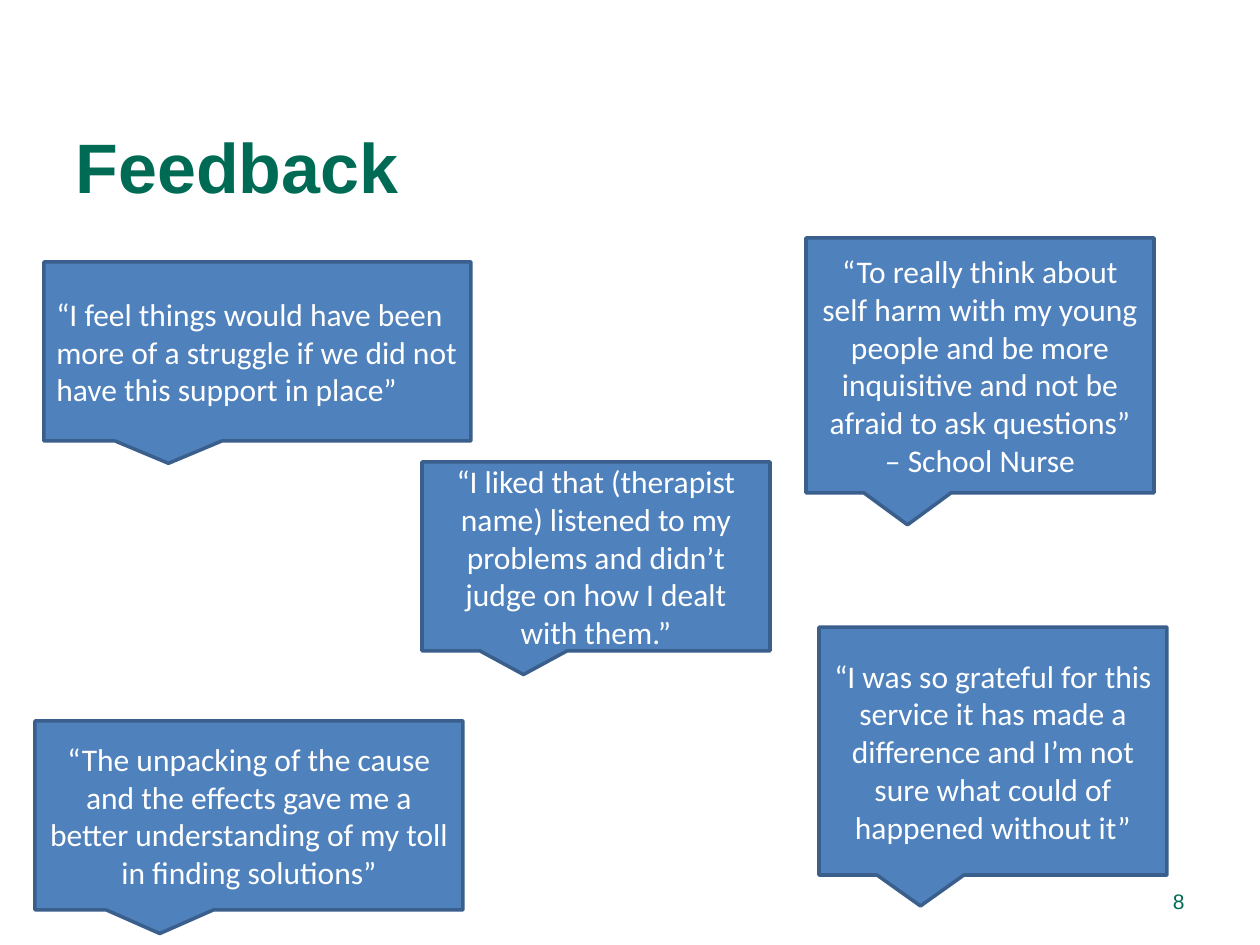
from pptx import Presentation
from pptx.dml.color import RGBColor
from pptx.enum.shapes import MSO_SHAPE
from pptx.enum.text import MSO_ANCHOR, PP_ALIGN
from pptx.util import Emu, Pt

CALLOUT = MSO_SHAPE.RECTANGULAR_CALLOUT
MIDDLE, BOTTOM = MSO_ANCHOR.MIDDLE, MSO_ANCHOR.BOTTOM
LEFT, CENTER, RIGHT = PP_ALIGN.LEFT, PP_ALIGN.CENTER, PP_ALIGN.RIGHT
TITLE_ONLY = 5
PX_PER_INCH = 126
COLORS = {"green": "006B54", "blue": "4F81BD", "edge": "3A5F8C", "white": "FFFFFF"}

QUOTES = [
    ((44, 262, 427, 179), LEFT,
     "“I feel things would have been more of a struggle if we did not have this support in place”"),
    ((35, 721, 428, 189), CENTER,
     "“The unpacking of the cause and the effects gave me a better understanding of my toll "
     "in finding solutions”"),
    ((819, 627, 348, 248), CENTER,
     "“I was so grateful for this service it has made a difference and I’m not sure what could of "
     "happened without it”"),
    ((422, 462, 348, 189), CENTER,
     "“I liked that (therapist name) listened to my problems and didn’t judge on how I dealt "
     "with them.”"),
    ((806, 238, 348, 255), CENTER,
     "“To really think about self harm with my young people and be more inquisitive and not be "
     "afraid to ask questions” – School Nurse"),
]


def px(n):
    return Emu(round(n * 914400 / PX_PER_INCH))


def rgb(name):
    return RGBColor.from_string(COLORS[name])


def set_text(sp, text, font, size, color, align, anchor, bold=False):
    tf = sp.text_frame
    tf.text = text
    tf.word_wrap = True
    tf.vertical_anchor = anchor
    p = tf.paragraphs[0]
    p.alignment = align
    r = p.runs[0]
    r.font.name = font
    r.font.size = Pt(size)
    r.font.bold = bold
    r.font.color.rgb = rgb(color)


def set_title(slide, text):
    sp = slide.shapes.title
    sp.left, sp.top, sp.width, sp.height = map(px, (63, 57, 1134, 157))
    set_text(sp, text, "Arial", 40, "green", LEFT, BOTTOM, bold=True)


def add_page_number(slide, text):
    sp = slide.shapes.add_textbox(*map(px, (903, 876, 294, 50)))
    set_text(sp, text, "Arial", 12, "green", RIGHT, MIDDLE)


def add_quote(slide, box, align, text):
    sp = slide.shapes.add_shape(CALLOUT, *map(px, box))
    sp.shadow.inherit = False
    sp.fill.solid()
    sp.fill.fore_color.rgb = rgb("blue")
    sp.line.color.rgb = rgb("edge")
    sp.line.width = Pt(2)
    set_text(sp, text, "Calibri", 18, "white", align, MIDDLE)


def main():
    prs = Presentation()
    prs.slide_width, prs.slide_height = px(1260), px(945)
    slide = prs.slides.add_slide(prs.slide_layouts[TITLE_ONLY])
    set_title(slide, "Feedback")
    add_page_number(slide, "8")
    for box, align, text in QUOTES:
        add_quote(slide, box, align, text)
    prs.save("out.pptx")


if __name__ == "__main__":
    main()
